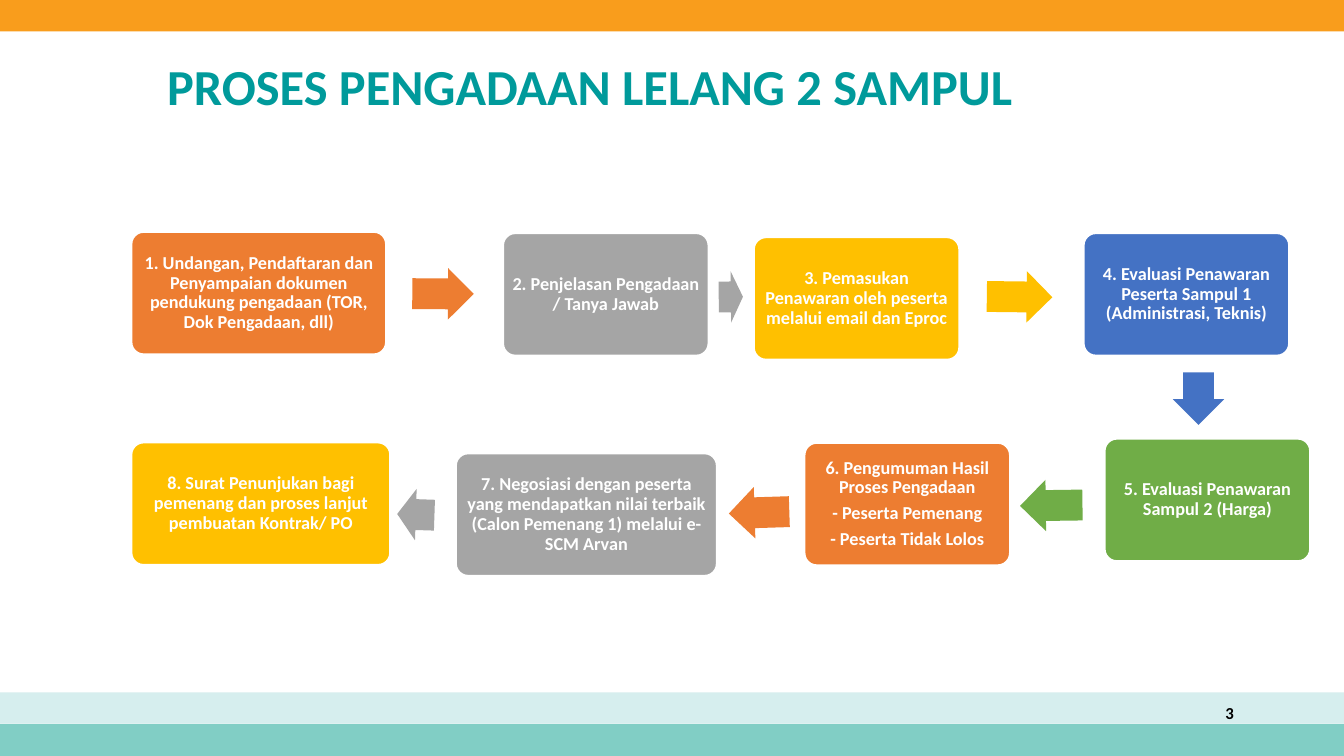
from dataclasses import dataclass

from pptx import Presentation
from pptx.dml.color import RGBColor
from pptx.enum.shapes import MSO_SHAPE
from pptx.enum.text import MSO_ANCHOR, PP_ALIGN
from pptx.util import Pt

RECTANGLE = MSO_SHAPE.RECTANGLE
ROUNDED = MSO_SHAPE.ROUNDED_RECTANGLE
ARROW = MSO_SHAPE.RIGHT_ARROW
MIDDLE = MSO_ANCHOR.MIDDLE
LEFT, CENTER, RIGHT = PP_ALIGN.LEFT, PP_ALIGN.CENTER, PP_ALIGN.RIGHT


@dataclass(frozen=True)
class Theme:
    font: str = "Calibri"
    title_size: float = 36
    step_size: float = 13
    number_size: float = 12
    title: str = "009A9B"
    black: str = "000000"
    white: str = "FFFFFF"
    header: str = "F99D1C"
    footer_light: str = "D6EEEE"
    footer_dark: str = "81CEC5"
    orange: str = "ED7D31"
    gray: str = "A5A5A5"
    yellow: str = "FFC000"
    blue: str = "4472C4"
    green: str = "70AD47"


theme = Theme()


def write_text(text, *, shape, size, color, align=LEFT, line_spacing=1.0, inset=(7.2, 3.6)):
    frame = shape.text_frame
    frame.word_wrap = True
    frame.vertical_anchor = MIDDLE
    frame.margin_left = frame.margin_right = Pt(inset[0])
    frame.margin_top = frame.margin_bottom = Pt(inset[1])
    frame.text = text
    for index, paragraph in enumerate(frame.paragraphs):
        paragraph.alignment = align
        paragraph.line_spacing = line_spacing
        paragraph.space_before = Pt(4.5 if index else 0)
        paragraph.font.name = theme.font
        paragraph.font.size = Pt(size)
        paragraph.font.bold = True
        paragraph.font.color.rgb = RGBColor.from_string(color)


def add_filled(kind, left, top, width, height, color):
    shape = slide.shapes.add_shape(kind, Pt(left), Pt(top), Pt(width), Pt(height))
    shape.shadow.inherit = False
    shape.fill.solid()
    shape.fill.fore_color.rgb = RGBColor.from_string(color)
    shape.line.fill.background()
    return shape


presentation = Presentation()
presentation.slide_width = Pt(960)
presentation.slide_height = Pt(540)
slide = presentation.slides.add_slide(presentation.slide_layouts[6])

for top, height, color in [
    (517, 23, theme.footer_dark),
    (494.5, 22.5, theme.footer_light),
    (0, 22.5, theme.header),
]:
    add_filled(RECTANGLE, 0, top, 960, height, color)

title = slide.shapes.add_textbox(Pt(112.3), Pt(35.3), Pt(713.5), Pt(56.2))
write_text("PROSES PENGADAAN LELANG 2 SAMPUL", shape=title, size=theme.title_size,
           color=theme.title, line_spacing=0.9)

page_number = slide.shapes.add_textbox(Pt(672.5), Pt(494.6), Pt(216), Pt(28.8))
write_text("3", shape=page_number, size=theme.number_size, color=theme.black, align=RIGHT)

STEP_HEIGHT = 87.6
ARROW_HEIGHT = 36.7

steps = [
    ("1. Undangan, Pendaftaran dan Penyampaian dokumen pendukung pengadaan (TOR, Dok Pengadaan, dll)",
     93.8, 165.6, 182, theme.orange, (294.5, 191.5, 43.9, 0.3)),
    ("2. Penjelasan Pengadaan / Tanya Jawab",
     359.3, 166.5, 146.9, theme.gray, (513.4, 193.7, 17.3, 359.4)),
    ("3. Pemasukan Penawaran oleh peserta melalui email dan Eproc",
     538.4, 169.4, 146.9, theme.yellow, (704.9, 193.7, 46.8, 0.7)),
    ("4. Evaluasi Penawaran Peserta Sampul 1 (Administrasi, Teknis)",
     774, 166.5, 146.9, theme.blue, (837.4, 266.4, 37.4, 90)),
    ("5. Evaluasi Penawaran Sampul 2 (Harga)",
     789, 313.3, 146.9, theme.green, (728.6, 342.7, 44.6, 179.2)),
    ("6. Pengumuman Hasil Proses Pengadaan\n- Peserta Pemenang\n- Peserta Tidak Lolos",
     574.6, 316.3, 146.9, theme.orange, (520.6, 347.8, 43.2, 178.2)),
    ("7. Negosiasi dengan peserta yang mendapatkan nilai terbaik (Calon Pemenang 1) melalui e-SCM Arvan",
     325.6, 323.8, 186.5, theme.gray, (283.7, 349.2, 26.6, 181.9)),
    ("8. Surat Penunjukan bagi pemenang dan proses lanjut pembuatan Kontrak/ PO",
     93.8, 316, 185, theme.yellow, None),
]

for text, left, top, width, color, arrow_place in steps:
    step = add_filled(ROUNDED, left, top, width, STEP_HEIGHT, color)
    step.adjustments[0] = 0.1
    step.line.color.rgb = RGBColor.from_string(theme.white)
    step.line.width = Pt(1.5)
    write_text(text, shape=step, size=theme.step_size, color=theme.white,
               align=CENTER, line_spacing=0.9, inset=(3.6, 3.6))
    if arrow_place:
        arrow_left, arrow_top, arrow_width, angle = arrow_place
        arrow = add_filled(ARROW, arrow_left, arrow_top, arrow_width, ARROW_HEIGHT, color)
        arrow.adjustments[0] = 0.6
        arrow.adjustments[1] = 0.5
        arrow.rotation = angle

presentation.save("out.pptx")
